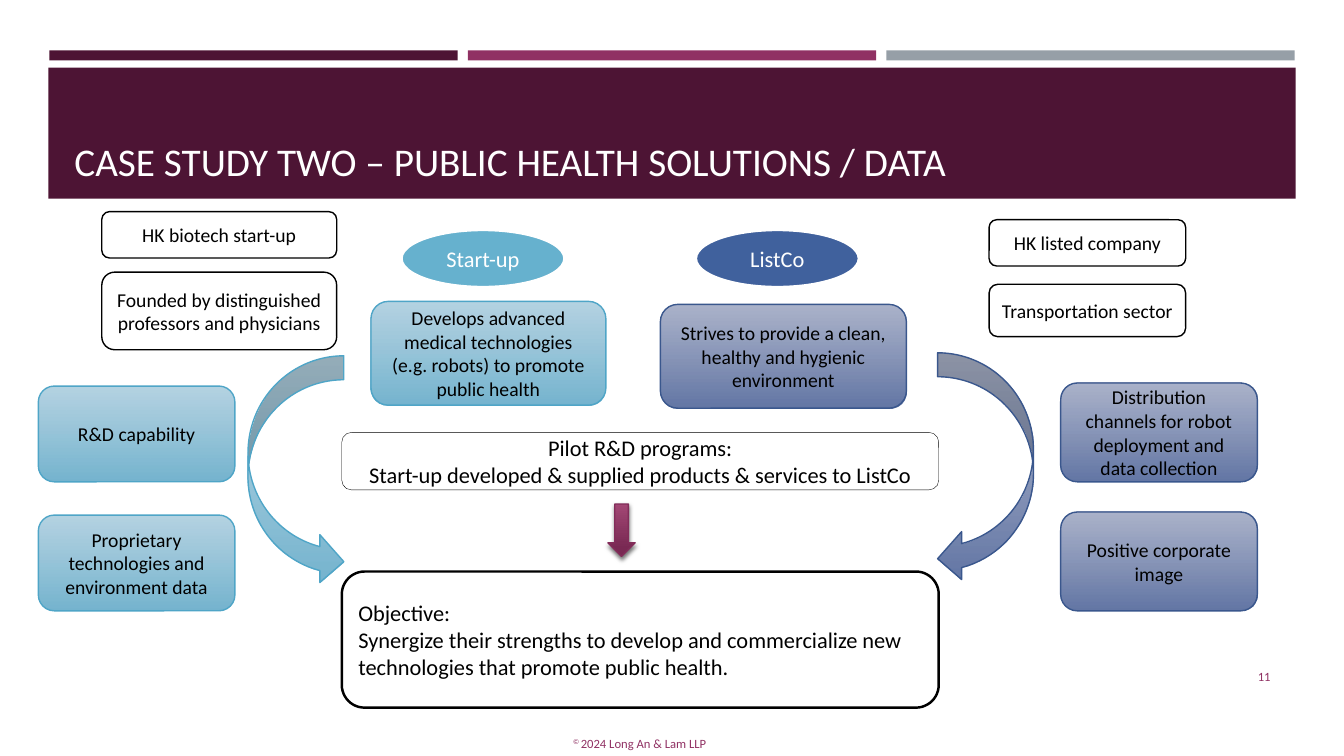
from lxml import etree
from pptx import Presentation
from pptx.dml.color import RGBColor
from pptx.enum.shapes import MSO_SHAPE as Preset
from pptx.enum.text import MSO_ANCHOR as Anchor, PP_ALIGN as Align
from pptx.oxml.ns import qn
from pptx.util import Emu, Pt

PX = 9144  # EMU per px, 100 px to the inch
FONT = "Calibri"

BLACK = RGBColor(0x00, 0x00, 0x00)
WHITE = RGBColor(0xFF, 0xFF, 0xFF)
PLUM = RGBColor(0x4D, 0x14, 0x34)
MAGENTA = RGBColor(0x90, 0x31, 0x63)
GREY = RGBColor(0x96, 0x9F, 0xA7)
SKY = RGBColor(0x66, 0xB1, 0xCE)
SKY_LINE = RGBColor(0x4F, 0xA5, 0xC7)
NAVY = RGBColor(0x40, 0x61, 0x9D)
NAVY_LINE = RGBColor(0x3A, 0x57, 0x8D)
ARROW_LINE = RGBColor(0x82, 0x2C, 0x59)

# Gradients: top colour, bottom colour, bottom position, top opacity in percent
SKY_BLEND = (RGBColor(0xAC, 0xCE, 0xDF), RGBColor(0x75, 0xB4, 0xCF), 1, 90)
NAVY_BLEND = (RGBColor(0xA1, 0xAA, 0xC4), RGBColor(0x63, 0x76, 0xA5), 1, 90)
ARROW_BLEND = (RGBColor(0xA2, 0x47, 0x74), RGBColor(0x79, 0x29, 0x53), 0.84, 100)


def place(box):
    return [Emu(length * PX) for length in box]


def add_child(parent, tag, **attributes):
    child = etree.SubElement(parent, qn(tag))
    for name, value in attributes.items():
        child.set(name, str(value))
    return child


def paint_gradient(shape, blend):
    top, bottom, bottom_position, opacity = blend
    shape.fill.gradient()
    shape.fill.gradient_angle = 270
    first, last = shape.fill.gradient_stops
    first.color.rgb, first.position = top, 0
    last.color.rgb, last.position = bottom, bottom_position
    if opacity < 100:
        colour = next(shape._element.spPr.iter(qn("a:srgbClr")))
        add_child(colour, "a:alpha", val=opacity * 1000)


def add_figure(slide, preset, box, fill=None, line=None, width=1):
    """Draw a preset shape; fill is None, a colour or a gradient tuple."""
    shape = slide.shapes.add_shape(preset, *place(box))
    shape.shadow.inherit = False
    if fill is None:
        shape.fill.background()
    elif isinstance(fill, RGBColor):
        shape.fill.solid()
        shape.fill.fore_color.rgb = fill
    else:
        paint_gradient(shape, fill)
    if line is None:
        shape.line.fill.background()
    else:
        shape.line.color.rgb = line
        shape.line.width = Pt(width)
    return shape


def add_run(paragraph, text, size, color):
    run = paragraph.add_run()
    run.text = text
    run.font.name = FONT
    run.font.size = Pt(size)
    run.font.color.rgb = color
    return run


def write(shape, lines, size=14, color=BLACK, align=Align.CENTER, anchor=Anchor.MIDDLE):
    frame = shape.text_frame
    frame.word_wrap = True
    frame.vertical_anchor = anchor
    for index, text in enumerate(lines):
        paragraph = frame.add_paragraph() if index else frame.paragraphs[0]
        paragraph.alignment = align
        add_run(paragraph, text, size, color)


def add_label(slide, box, text, size, color, align, anchor):
    write(slide.shapes.add_textbox(*place(box)), [text], size, color, align, anchor)


def add_card(slide, box, text, fill=None, line=BLACK):
    write(add_figure(slide, Preset.ROUNDED_RECTANGLE, box, fill, line), [text])


def add_down_arrow(slide, box):
    arrow = add_figure(slide, Preset.DOWN_ARROW, box, ARROW_BLEND, ARROW_LINE)
    effects = arrow._element.spPr.find(qn("a:effectLst"))
    shadow = add_child(effects, "a:outerShdw", blurRad=Pt(3), dist=Pt(2),
                       dir=5400000, rotWithShape=0)
    add_child(add_child(shadow, "a:srgbClr", val="000000"), "a:alpha", val=55000)


def add_header(slide):
    for index, color in enumerate((PLUM, MAGENTA, GREY)):
        add_figure(slide, Preset.RECTANGLE, (49 + 415 * index, 50, 405, 10), color)
    add_figure(slide, Preset.RECTANGLE, (48, 67, 1237, 130), PLUM)
    add_label(slide, (64, 77, 1206, 111), "CASE STUDY TWO – PUBLIC HEALTH SOLUTIONS / DATA",
              28, WHITE, Align.LEFT, Anchor.BOTTOM)


def add_footer(slide):
    footer = slide.shapes.add_textbox(*place((301, 725, 667, 25)))
    footer.text_frame.word_wrap = True
    paragraph = footer.text_frame.paragraphs[0]
    paragraph.alignment = Align.CENTER
    sign = add_run(paragraph, "© ", 9, MAGENTA)
    sign.font._element.set("baseline", "30000")
    add_run(paragraph, "2024 Long An & Lam LLP", 9, MAGENTA)
    add_label(slide, (1155, 651, 115, 40), "11", 9, MAGENTA, Align.RIGHT, Anchor.MIDDLE)


def add_parties(slide):
    for left, name, color in ((398, "Start-up", SKY), (690, "ListCo", NAVY)):
        oval = add_figure(slide, Preset.OVAL, (left, 228, 162, 57), color, WHITE, 2)
        write(oval, [name], 16, WHITE)

    # Who they are
    add_card(slide, (101, 210, 233, 46), "HK biotech start-up")
    add_card(slide, (101, 270, 233, 77), "Founded by distinguished professors and physicians")
    add_card(slide, (981, 218, 195, 46), "HK listed company")
    add_card(slide, (981, 282, 195, 52), "Transportation sector")

    # What they do and what they bring
    sky, navy = (SKY_BLEND, SKY_LINE), (NAVY_BLEND, NAVY_LINE)
    for box, text, style in (
        ((368, 299, 233, 103), "Develops advanced medical technologies (e.g. robots) "
                               "to promote public health", sky),
        ((38, 383, 195, 95), "R&D capability", sky),
        ((38, 511, 195, 95), "Proprietary technologies and environment data", sky),
        ((655, 302, 244, 103), "Strives to provide a clean, healthy and hygienic environment", navy),
        ((1052, 380, 195, 98), "Distribution channels for robot deployment and data collection", navy),
        ((1052, 508, 195, 98), "Positive corporate image", navy),
    ):
        add_card(slide, box, text, *style)


def add_outcome(slide):
    objective = add_figure(slide, Preset.ROUNDED_RECTANGLE, (339, 567, 592, 135),
                           WHITE, BLACK, 1.75)
    write(objective, ["Objective:", "Synergize their strengths to develop and commercialize "
                      "new technologies that promote public health."], 16, align=Align.LEFT)
    add_down_arrow(slide, (603, 500, 27, 52))
    pilot = add_figure(slide, Preset.ROUNDED_RECTANGLE, (339, 429, 592, 57),
                       WHITE, BLACK, 0.25)
    write(pilot, ["Pilot R&D programs:",
                  "Start-up developed & supplied products & services to ListCo"], 16)

    # Curved arrows from both parties to the objective
    add_figure(slide, Preset.CURVED_RIGHT_ARROW, (246, 353, 95, 228), SKY_BLEND, SKY_LINE)
    mirrored = add_figure(slide, Preset.CURVED_RIGHT_ARROW, (930, 350, 95, 228),
                          NAVY_BLEND, NAVY_LINE)
    mirrored._element.spPr.find(qn("a:xfrm")).set("flipH", "1")


def main():
    presentation = Presentation()
    presentation.slide_width, presentation.slide_height = place((1333, 750))
    slide = presentation.slides.add_slide(presentation.slide_layouts[6])
    add_header(slide)
    add_footer(slide)
    add_parties(slide)
    add_outcome(slide)
    presentation.save("out.pptx")


if __name__ == "__main__":
    main()
